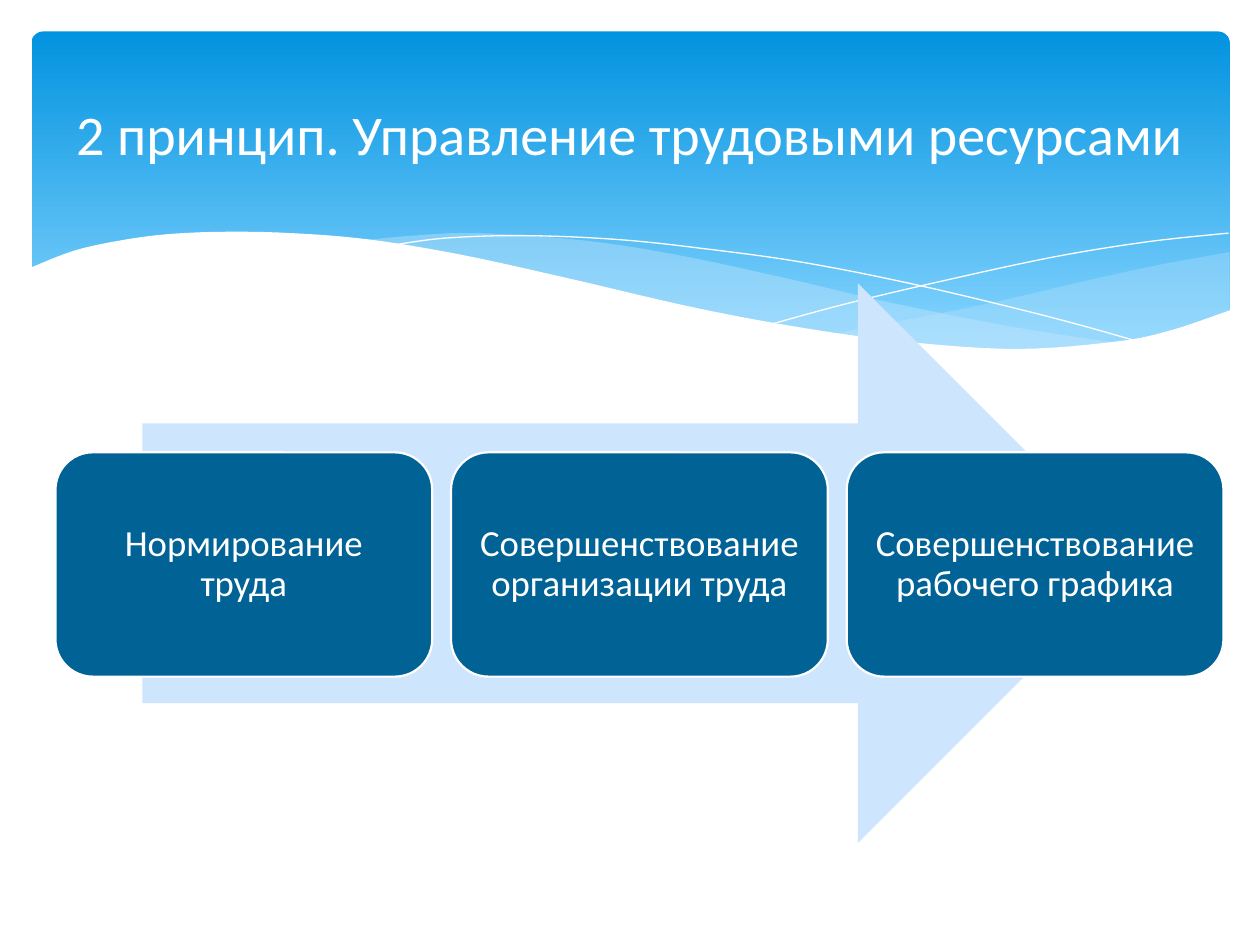
from lxml.etree import SubElement
from pptx import Presentation
from pptx.dml.color import RGBColor
from pptx.enum.shapes import MSO_SHAPE as Preset
from pptx.enum.text import MSO_ANCHOR as Anchor, PP_ALIGN as Align
from pptx.oxml.ns import qn
from pptx.util import Inches, Pt

COLUMNS, ROWS = 100, 75
CELL = Inches(10) // COLUMNS
FONT = "Calibri"
WHITE, PALE_WAVE, ARROW_BLUE, CARD_BLUE = "FFFFFF", "C6E7FC", "CEE5FE", "016296"
STEPS = [
    "Нормирование труда",
    "Совершенствование организации труда",
    "Совершенствование рабочего графика",
]

RIGHT_WAVE_TOP = [(97.6, 20), (92.1, 21), (86.1, 22.3), (77.9, 24.2), (66.1, 26.5)]
RIGHT_WAVE_BOTTOM = [(66.1, 26.5), (73.2, 27.4), (80.3, 27.8), (86.3, 27.5),
                     (92.1, 26.5), (97.6, 24.7)]
LONG_WAVE_TOP = [(89.3, 27.3), (80.7, 26), (70.6, 24), (62.9, 22.2), (54.1, 20.3),
                 (46.5, 19.1), (38, 18.5), (32.8, 18.7), (28.6, 19.1)]
LONG_WAVE_BOTTOM = [(28.6, 19.1), (36.2, 20.3), (44.9, 22.2), (56.6, 24.8), (65, 26.4),
                    (73.6, 27.5), (80.7, 27.8), (85.7, 27.7), (89.3, 27.3)]
FALLING_LINE = [(30.9, 19.5), (35.3, 18.9), (41.6, 18.7), (48.9, 19), (55.6, 19.7),
                (63.6, 20.8), (72.7, 22.6), (83.1, 25.1), (90.7, 27.2)]
RISING_LINE = [(61.3, 25.7), (67.2, 24.1), (74.8, 22.3), (83.6, 20.4), (91, 19.2),
               (97.5, 18.5)]
WHITE_WAVE = [(97.7, 24.6), (93, 26.2), (88.7, 27.1), (80.9, 27.7), (72.6, 27.2),
              (64.8, 26.2), (55.5, 24.5), (44.7, 22), (36.5, 20.2), (29.2, 19),
              (23, 18.5), (17.7, 18.4), (13.2, 18.6), (9.5, 19.1), (5.9, 19.9),
              (2.3, 21.3)]


def cells(*values):
    return [round(value * CELL) for value in values]


def color(hex_text):
    return RGBColor.from_string(hex_text)


def smooth(knots, samples=6):
    padded = [knots[0], *knots, knots[-1]]
    curve = []
    for before, start, end, after in zip(padded, padded[1:], padded[2:], padded[3:]):
        for index in range(samples):
            t = index / samples
            curve.append(tuple(
                b + t * (c - a) / 2 + t**2 * (a - 2.5 * b + 2 * c - d / 2)
                + t**3 * (1.5 * (b - c) + (d - a) / 2)
                for a, b, c, d in zip(before, start, end, after)
            ))
    return curve + [knots[-1]]


def set_outline(shape, hex_text=None, width=0):
    if hex_text:
        shape.line.color.rgb = color(hex_text)
        shape.line.width = Pt(width)
    else:
        shape.line.fill.background()


def set_fill(shape, hex_text, opacity=100):
    shape.fill.solid()
    shape.fill.fore_color.rgb = color(hex_text)
    if opacity < 100:
        tone = shape.fill._xPr.find(qn("a:solidFill"))[0]
        SubElement(tone, qn("a:alpha"), val=str(opacity * 1000))


def draw_points(page, points, closed):
    start, *rest = [tuple(cells(*point)) for point in points]
    builder = page.shapes.build_freeform(*start)
    builder.add_line_segments(rest, close=closed)
    shape = builder.convert_to_shape()
    shape.shadow.inherit = False
    return shape


def add_wave(page, points, hex_text, opacity=100):
    wave = draw_points(page, points, True)
    set_fill(wave, hex_text, opacity)
    set_outline(wave)


def add_curve(page, knots):
    curve = draw_points(page, smooth(knots), False)
    curve.fill.background()
    set_outline(curve, WHITE)


def add_preset(page, preset, area):
    shape = page.shapes.add_shape(preset, *cells(*area))
    shape.shadow.inherit = False
    set_outline(shape)
    return shape


def add_banner(page):
    banner = add_preset(page, Preset.ROUNDED_RECTANGLE, (2.5, 2.5, 95.1, 27))
    banner.adjustments[0] = 0.034
    banner.fill.gradient()
    banner.fill.gradient_angle = 270
    for stop, position, tone in zip(banner.fill.gradient_stops, (0, 0.9), ("0293E0", "83D3FE")):
        stop.position = position
        stop.color.rgb = color(tone)


def write_text(box, text, size):
    frame = box.text_frame
    frame.word_wrap = True
    frame.vertical_anchor = Anchor.MIDDLE
    frame.text = text
    para = frame.paragraphs[0]
    para.alignment = Align.CENTER
    font = para.runs[0].font
    font.name, font.size, font.color.rgb = FONT, Pt(size), color(WHITE)
    return frame


def add_title(page, text):
    box = page.shapes.add_textbox(*cells(5, 3.7, 90, 13.7))
    write_text(box, text, 32)


def add_step(page, column, text):
    card = add_preset(page, Preset.ROUNDED_RECTANGLE, (4.4 + 31.4 * column, 35.9, 29.9, 17.8))
    set_fill(card, CARD_BLUE)
    set_outline(card, WHITE, 1.25)
    frame = write_text(card, text, 21)
    inset = Inches(0.09)
    frame.margin_left = frame.margin_right = inset
    frame.margin_top = frame.margin_bottom = inset
    para = frame.paragraphs[0]
    para.line_spacing = 0.9
    para.space_after = Pt(7.35)


def main():
    deck = Presentation()
    deck.slide_width, deck.slide_height = cells(COLUMNS, ROWS)
    page = deck.slides.add_slide(deck.slide_layouts[6])
    add_banner(page)
    add_wave(page, smooth(RIGHT_WAVE_TOP) + smooth(RIGHT_WAVE_BOTTOM), PALE_WAVE, 29)
    add_wave(page, smooth(LONG_WAVE_TOP) + smooth(LONG_WAVE_BOTTOM), PALE_WAVE, 40)
    add_curve(page, FALLING_LINE)
    add_curve(page, RISING_LINE)
    add_wave(page, smooth(WHITE_WAVE) + [(2.3, 32.9), (97.7, 32.9)], WHITE)
    add_title(page, "2 принцип. Управление трудовыми ресурсами")
    arrow = add_preset(page, Preset.RIGHT_ARROW, (11.3, 22.5, 79, 44.4))
    set_fill(arrow, ARROW_BLUE)
    for column, text in enumerate(STEPS):
        add_step(page, column, text)
    deck.save("out.pptx")


if __name__ == "__main__":
    main()
